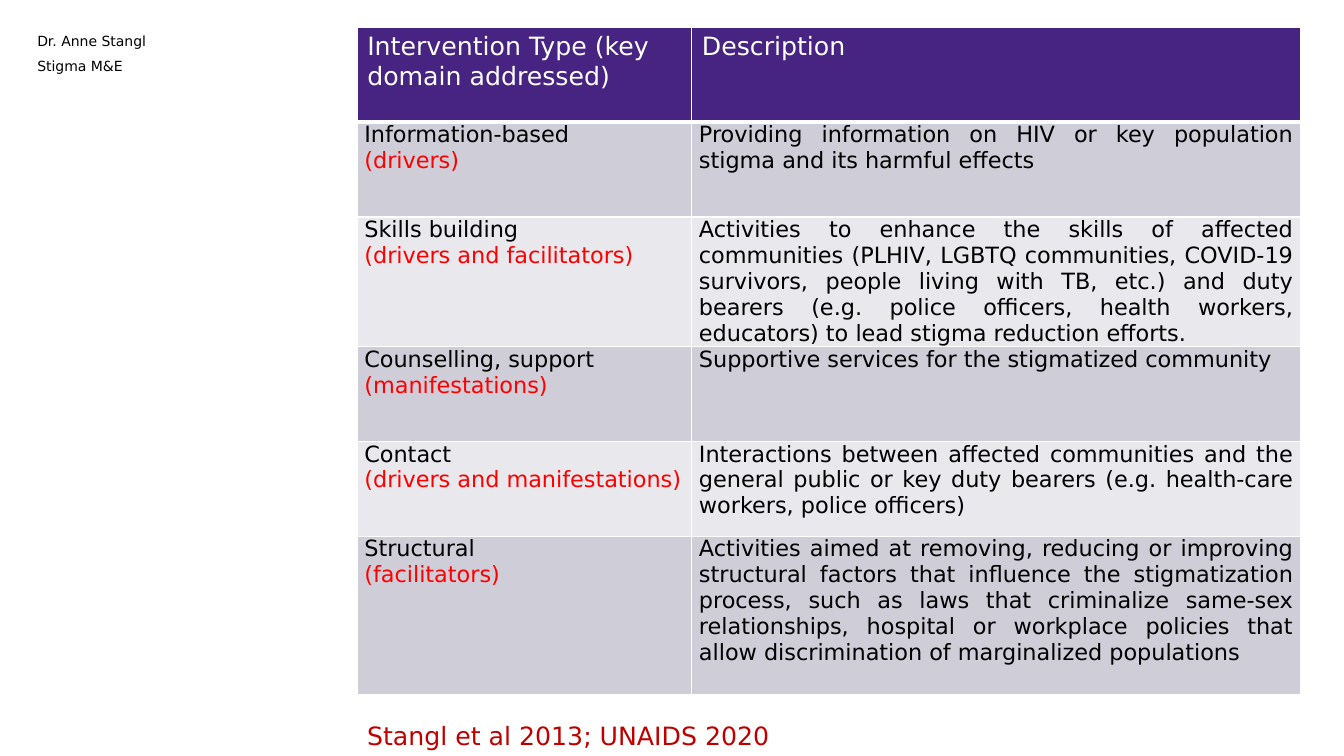
from lxml import etree
from pptx import Presentation
from pptx.dml.color import RGBColor
from pptx.enum.text import MSO_AUTO_SIZE, PP_ALIGN
from pptx.oxml.ns import qn
from pptx.util import Cm, Pt

JUSTIFY, LEFT = PP_ALIGN.JUSTIFY, PP_ALIGN.LEFT
FIT_SHAPE, NO_FIT = MSO_AUTO_SIZE.SHAPE_TO_FIT_TEXT, MSO_AUTO_SIZE.NONE

FONT = "DejaVu Sans"
WHITE = RGBColor(0xFF, 0xFF, 0xFF)
BLACK = RGBColor(0x00, 0x00, 0x00)
RED = RGBColor(0xFF, 0x00, 0x00)
DARK_RED = RGBColor(0xC0, 0x00, 0x00)
PURPLE = RGBColor(0x47, 0x24, 0x82)
BANDS = (RGBColor(0xCF, 0xCD, 0xD8), RGBColor(0xE9, 0xE8, 0xED))

# Content
HEADINGS = ("Intervention Type (key domain addressed)", "Description")
# Each intervention: paragraphs of (text, colour) runs, then the description
INTERVENTIONS = [
    ([[("Information-based", BLACK)], [("(drivers)", RED)]],
     "Providing information on HIV or key population stigma and its harmful effects"),
    ([[("Skills building", BLACK)], [("(drivers and facilitators)", RED)]],
     "Activities to enhance the skills of affected communities (PLHIV, LGBTQ communities, "
     "COVID-19 survivors, people living with TB, etc.) and duty bearers (e.g. police officers, "
     "health workers, educators) to lead stigma reduction efforts."),
    ([[("Counselling, support ", BLACK), ("(manifestations)", RED)]],
     "Supportive services for the stigmatized community"),
    ([[("Contact", BLACK)], [("(drivers and manifestations)", RED)]],
     "Interactions between affected communities and the general public or key duty bearers "
     "(e.g. health-care workers, police officers)"),
    ([[("Structural", BLACK)], [("(facilitators)", RED)]],
     "Activities aimed at removing, reducing or improving structural factors that influence "
     "the stigmatization process, such as laws that criminalize same-sex relationships, "
     "hospital or workplace policies that allow discrimination of marginalized populations"),
]
CREDITS = ("Dr. Anne Stangl", "Stigma M&E")
CITATION = "Stangl et al 2013; UNAIDS 2020"

# Layout
TABLE_LEFT, TABLE_TOP = Cm(9), Cm(0.69)
COLUMN_WIDTHS = (Cm(8.43), Cm(15.34))
ROW_HEIGHT, LAST_ROW_HEIGHT = Cm(2.39), Cm(3.99)
CREDIT_WIDTHS = (Cm(6.15), Cm(11.1))
CREDIT_LEFT, CREDIT_TOP, CREDIT_STEP = Cm(0.94), Cm(0.81), Cm(0.64)
BODY_MARGINS = {"margin_left": Cm(0.18), "margin_right": Cm(0.18),
                "margin_top": 0, "margin_bottom": 0}
NO_MARGINS = dict.fromkeys(BODY_MARGINS, 0)


def set_all(target, values):
    for name, value in values.items():
        setattr(target, name, value)


def write(frame, paragraphs, size, align=LEFT, space_after=0):
    for index, runs in enumerate(paragraphs):
        paragraph = frame.add_paragraph() if index else frame.paragraphs[0]
        set_all(paragraph, {"alignment": align, "space_after": Pt(space_after)})
        for text, colour in runs:
            run = paragraph.add_run()
            run.text = text
            set_all(run.font, {"name": FONT, "size": Pt(size), "bold": False})
            run.font.color.rgb = colour


def style_cell(cell, fill, bottom_width=1):
    properties = cell._tc.get_or_add_tcPr()
    for side in ("lnL", "lnR", "lnT", "lnB"):
        width = bottom_width if side == "lnB" else 1
        border = etree.SubElement(properties, qn("a:" + side), w=str(Pt(width)))
        solid = etree.SubElement(border, qn("a:solidFill"))
        etree.SubElement(solid, qn("a:srgbClr"), val=str(WHITE))
    cell.fill.solid()
    cell.fill.fore_color.rgb = fill


def add_text(slide, box, text, size, colour, margins, fit, space_after=0):
    frame = slide.shapes.add_textbox(*box).text_frame
    set_all(frame, {"word_wrap": True, "auto_size": fit, **margins})
    write(frame, [[(text, colour)]], size, space_after=space_after)


def add_interventions(slide):
    row_heights = [ROW_HEIGHT] * len(INTERVENTIONS) + [LAST_ROW_HEIGHT]
    table = slide.shapes.add_table(
        len(row_heights), len(COLUMN_WIDTHS), TABLE_LEFT, TABLE_TOP,
        sum(COLUMN_WIDTHS), sum(row_heights)).table
    for column, width in zip(table.columns, COLUMN_WIDTHS):
        column.width = width
    for row, height in zip(table.rows, row_heights):
        row.height = height

    # Header row
    for column, heading in enumerate(HEADINGS):
        cell = table.cell(0, column)
        style_cell(cell, PURPLE, bottom_width=3)
        write(cell.text_frame, [[(heading, WHITE)]], 18)

    # Banded body rows
    for row, (kind, description) in enumerate(INTERVENTIONS, start=1):
        entries = ((kind, LEFT), ([[(description, BLACK)]], JUSTIFY))
        for column, (paragraphs, align) in enumerate(entries):
            cell = table.cell(row, column)
            set_all(cell, BODY_MARGINS)
            style_cell(cell, BANDS[(row - 1) % 2])
            write(cell.text_frame, paragraphs, 16, align)


def main():
    deck = Presentation()
    set_all(deck, {"slide_width": Cm(33.86), "slide_height": Cm(19.05)})
    slide = deck.slides.add_slide(deck.slide_layouts[6])

    add_interventions(slide)

    # Citation under the table
    add_text(slide, (TABLE_LEFT, Cm(18.03), Cm(23.16), Cm(1.02)),
             CITATION, 18, DARK_RED, {}, FIT_SHAPE)

    # Speaker and topic
    for index, (credit, width) in enumerate(zip(CREDITS, CREDIT_WIDTHS)):
        box = (CREDIT_LEFT, CREDIT_TOP + index * CREDIT_STEP, width, Cm(0.69))
        add_text(slide, box, credit, 10, BLACK, NO_MARGINS, NO_FIT, space_after=6)

    deck.save("out.pptx")


if __name__ == "__main__":
    main()
